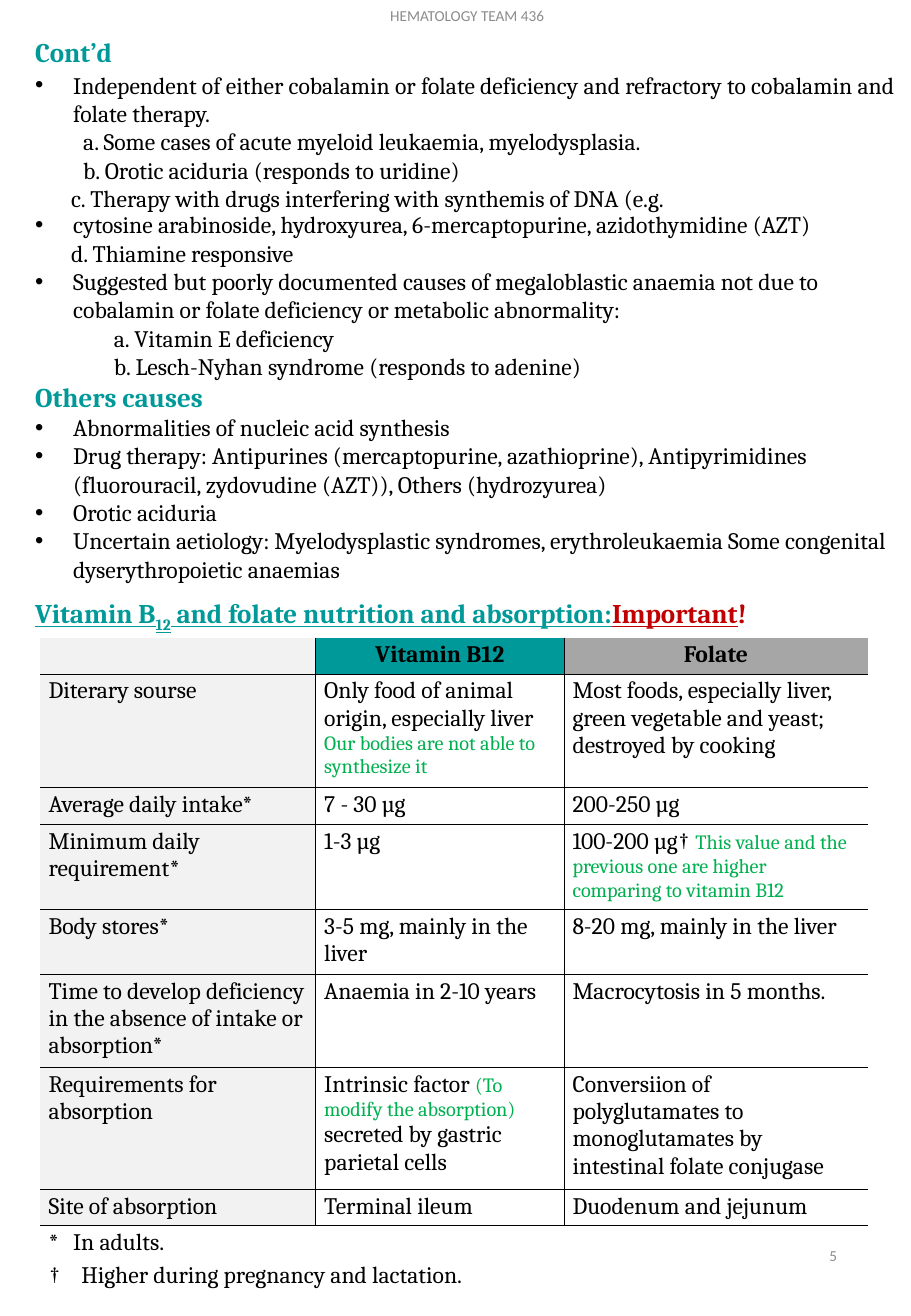
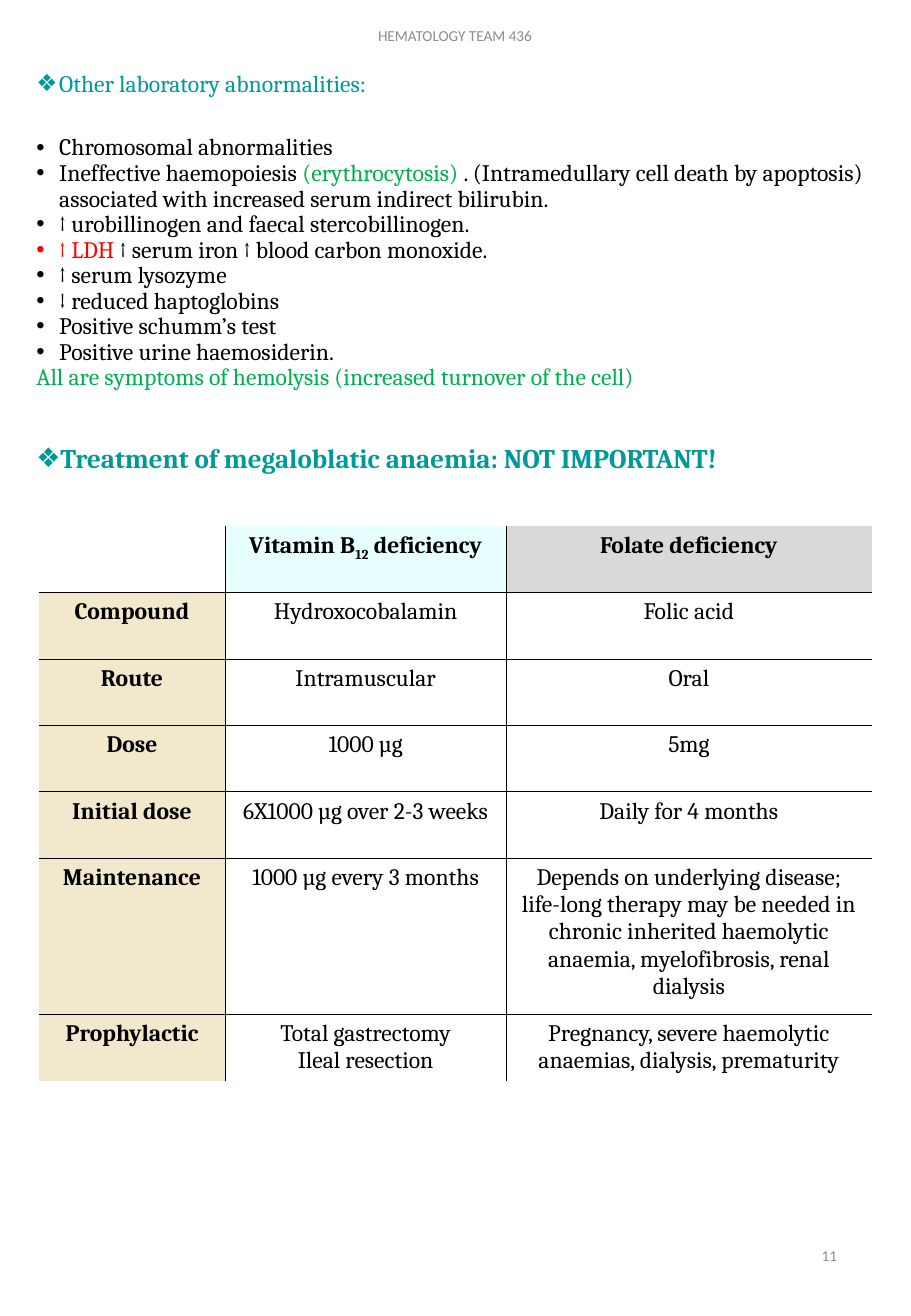
import dataclasses

import pptx
import pptx.dml.color
import pptx.enum.text
import pptx.oxml
import pptx.oxml.ns
import pptx.util

Pt = pptx.util.Pt
RGBColor = pptx.dml.color.RGBColor
ALIGN = pptx.enum.text.PP_ALIGN
ANCHOR = pptx.enum.text.MSO_ANCHOR
AUTO_SIZE = pptx.enum.text.MSO_AUTO_SIZE

BLACK = RGBColor(0x00, 0x00, 0x00)
TEAL = RGBColor(0x00, 0x99, 0x99)
GREEN = RGBColor(0x00, 0xB0, 0x50)
RED = RGBColor(0xFF, 0x00, 0x00)
DARK_RED = RGBColor(0xC0, 0x00, 0x00)
FOOTER_GRAY = RGBColor(0x8C, 0x8C, 0x8C)
LABEL_GRAY = RGBColor(0xF2, 0xF2, 0xF2)
FOLATE_GRAY = RGBColor(0xA6, 0xA6, 0xA6)
PALE_GRAY = RGBColor(0xD9, 0xD9, 0xD9)
PALE_CYAN = RGBColor(0xE7, 0xFF, 0xFF)
SAND = RGBColor(0xF2, 0xE9, 0xCC)

BODY = {"name": "Cambria", "size": Pt(14), "bold": False, "color": BLACK}
BOLD = BODY | {"bold": True}
HEADING = BOLD | {"size": Pt(16), "color": TEAL}
UNDERLINED = HEADING | {"underline": True}
GREEN_BODY = BODY | {"color": GREEN}
SMALL_NOTE = GREEN_BODY | {"size": Pt(12)}
FOOTER = {"name": "Calibri", "size": Pt(9), "color": FOOTER_GRAY}


@dataclasses.dataclass
class Line:
    spans: list
    bullet: str = ""
    left: float = 0
    hanging: float = 0
    before: float = 0
    spacing: float = 1.0
    align: object = ALIGN.LEFT


def line(*spans, style=BODY, **settings):
    pairs = [(span, style) if isinstance(span, str) else span for span in spans]
    return Line(pairs, **settings)


def bulleted(*spans, **settings):
    return line(*spans, **({"bullet": "•", "left": 22.5, "hanging": 22.5} | settings))


def lab_item(*spans, **settings):
    return bulleted(*spans, **({"left": 13.5, "hanging": 13.5, "spacing": 0.9} | settings))


def add_xml(parent, markup):
    declaration = pptx.oxml.ns.nsdecls("a")
    parent.append(pptx.oxml.parse_xml(markup.replace(" ", f" {declaration} ", 1)))


def write_span(para, text, style):
    span = para.add_run()
    span.text = text
    for name, value in style.items():
        if name == "color":
            span.font.color.rgb = value
        elif name == "baseline":
            span._r.get_or_add_rPr().set("baseline", str(value))
        else:
            setattr(span.font, name, value)


def write_lines(frame, lines):
    for index, item in enumerate(lines):
        para = frame.paragraphs[0] if index == 0 else frame.add_paragraph()
        settings = {
            "alignment": item.align,
            "line_spacing": item.spacing,
            "space_before": Pt(item.before),
            "space_after": Pt(0),
        }
        for name, value in settings.items():
            setattr(para, name, value)
        properties = para._p.get_or_add_pPr()
        properties.set("marL", str(Pt(item.left)))
        properties.set("indent", str(-Pt(item.hanging)))
        if item.bullet:
            add_xml(properties, '<a:buFont typeface="Arial"/>')
            add_xml(properties, f'<a:buChar char="{item.bullet}"/>')
        else:
            add_xml(properties, "<a:buNone />")
        for text, style in item.spans:
            write_span(para, text, style)


def fill_box(box, place, lines, anchor=ANCHOR.TOP):
    for name, value in zip(("left", "top", "width", "height"), place):
        setattr(box, name, Pt(value))
    frame = box.text_frame
    settings = {"word_wrap": True, "auto_size": AUTO_SIZE.NONE, "vertical_anchor": anchor}
    for name, value in settings.items():
        setattr(frame, name, value)
    write_lines(frame, lines)


def add_text(page, place, lines):
    box = page.shapes.add_textbox(*map(Pt, place))
    fill_box(box, place, lines, ANCHOR.MIDDLE)


def add_header_and_number(page, left, top, number):
    header = line("HEMATOLOGY TEAM 436", style=FOOTER, align=ALIGN.CENTER)
    add_text(page, (left, top, 182, 41.8), [header])
    add_text(page, (381.6, 722.9, 121.7, 41.8), [line(number, style=FOOTER, align=ALIGN.RIGHT)])


def draw_edges(cell, edges):
    properties = cell._tc.get_or_add_tcPr()
    for side, drawn in edges.items():
        paint = f'<a:solidFill><a:srgbClr val="{BLACK}"/></a:solidFill>' if drawn else "<a:noFill/>"
        add_xml(properties, f'<a:ln{side} w="{Pt(0.5)}">{paint}</a:ln{side}>')


def add_grid(page, origin, widths, heights, rows, header_fills, label_fill,
             label_style=BODY, align=ALIGN.LEFT, margins=(7.2, 3.6)):
    size = (sum(widths), sum(heights))
    frame = page.shapes.add_table(len(rows), len(widths), *map(Pt, origin + size))
    table = frame.table
    table.first_row = table.horz_banding = False
    for column, width in zip(table.columns, widths):
        column.width = Pt(width)
    for row, height in zip(table.rows, heights):
        row.height = Pt(height)
    for top, texts in enumerate(rows):
        merged = len(texts) == 1
        if merged:
            table.cell(top, 0).merge(table.cell(top, len(widths) - 1))
        for left in range(len(widths)):
            cell = table.cell(top, left)
            cell.margin_left = cell.margin_right = Pt(margins[0])
            cell.margin_top = cell.margin_bottom = Pt(margins[1])
            draw_edges(cell, {
                "L": left > 0 and not merged,
                "R": left < len(widths) - 1 and not merged,
                "T": top > 0,
                "B": top < len(rows) - 1,
            })
            fill = header_fills[left] if top == 0 else label_fill if left == 0 and not merged else None
            if fill is None:
                cell.fill.background()
            else:
                cell.fill.solid()
                cell.fill.fore_color.rgb = fill
            content = texts[left] if left < len(texts) else ""
            if not content:
                cell.text_frame.paragraphs[0]._p.get_or_add_endParaRPr().set("sz", "1400")
                continue
            style = BOLD if top == 0 else label_style if left == 0 else BODY
            if isinstance(content, str):
                content = [line(part, style=style) for part in content.split("\n")]
            for item in content:
                item.align = ALIGN.CENTER if top == 0 else align
            write_lines(cell.text_frame, content)


def build_causes_page(deck):
    page = deck.slides.add_slide(deck.slide_layouts[3])
    title, independent, others = page.placeholders
    fill_box(title, (13.7, 17.3, 200, 26.6), [line("Cont’d", style=HEADING)], ANCHOR.MIDDLE)
    fill_box(independent, (13.7, 38.2, 526, 90), [
        bulleted("Independent of either cobalamin or folate deficiency and refractory to "
                 "cobalamin and folate therapy."),
        line("a. Some cases of acute myeloid leukaemia, myelodysplasia.", left=28.4),
        line("b. Orotic aciduria (responds to uridine)", left=28.4),
        line("c. Therapy with drugs interfering with synthemis of DNA (e.g.", left=21.2),
    ])
    fill_box(others, (13.7, 121, 526, 230), [
        bulleted("cytosine arabinoside, hydroxyurea, 6-mercaptopurine, azidothymidine (AZT)"),
        line("d. Thiamine responsive", left=21.2),
        bulleted("Suggested but poorly documented causes of megaloblastic anaemia not due to "
                 "cobalamin or folate deficiency or metabolic abnormality:"),
        line("a. Vitamin E deficiency", left=46.6),
        line("b. Lesch-Nyhan syndrome (responds to adenine)", left=46.6),
        line("Others causes", style=HEADING),
        bulleted("Abnormalities of nucleic acid synthesis"),
        bulleted("Drug therapy: Antipurines (mercaptopurine, azathioprine), Antipyrimidines "
                 "(fluorouracil, zydovudine (AZT)), Others (hydrozyurea)"),
        bulleted("Orotic aciduria"),
        bulleted("Uncertain aetiology: Myelodysplastic syndromes, erythroleukaemia Some "
                 "congenital dyserythropoietic anaemias"),
    ])
    add_text(page, (13.7, 351.4, 470, 26.6), [line(
        "Vitamin B",
        ("12", UNDERLINED | {"baseline": -25000}),
        " and folate nutrition and absorption:",
        ("Important", UNDERLINED | {"color": DARK_RED}),
        ("!", HEADING | {"color": DARK_RED}),
        style=UNDERLINED,
    )])
    rows = [
        ["", "Vitamin B12", "Folate"],
        ["Diterary sourse",
         [line("Only food of animal origin, especially liver"),
          line("Our bodies are not able to synthesize it", style=SMALL_NOTE)],
         "Most foods, especially liver, green vegetable and yeast; destroyed by cooking"],
        ["Average daily intake*", "7 - 30 µg", "200-250 µg"],
        ["Minimum daily requirement*", "1-3 µg",
         [line("100-200 µg† ", ("This value and the previous one are higher comparing to "
                                "vitamin B12", SMALL_NOTE))]],
        ["Body stores*", "3-5 mg, mainly in the liver", "8-20 mg, mainly in the liver"],
        ["Time to develop deficiency in the absence of intake or absorption*",
         "Anaemia in 2-10 years", "Macrocytosis in 5 months."],
        ["Requirements for absorption",
         [line("Intrinsic factor ", ("(To modify the absorption) ", SMALL_NOTE),
               "secreted by gastric parietal cells")],
         "Conversiion of polyglutamates to monoglutamates by intestinal folate conjugase"],
        ["Site of absorption", "Terminal ileum", "Duodenum and jejunum"],
        [[line("*\tIn adults.", left=14.5, hanging=14.5),
          line("†\tHigher during pregnancy and lactation.", left=19.5, hanging=19.5, before=3.6)]],
    ]
    add_grid(page, (23.8, 378), (163.4, 147.2, 180),
             (21.5, 67.5, 21.8, 50.4, 38.5, 55.1, 72.3, 21.5, 43), rows,
             (LABEL_GRAY, TEAL, FOLATE_GRAY), LABEL_GRAY, margins=(5, 2.2))
    add_header_and_number(page, 185.8, -11.5, "5")


def build_treatment_page(deck):
    page = deck.slides.add_slide(deck.slide_layouts[1])
    title, body = page.placeholders
    title._element.getparent().remove(title._element)
    fill_box(body, (14.4, 38.9, 510.5, 260), [
        lab_item("Other laboratory abnormalities:", style=BODY | {"color": TEAL}, bullet="❖"),
        lab_item("Chromosomal abnormalities", before=22.7),
        lab_item("Ineffective haemopoiesis ", ("(erythrocytosis) ", GREEN_BODY),
                 ". (Intramedullary cell death by apoptosis) associated with increased serum "
                 "indirect bilirubin."),
        lab_item("↑ urobillinogen and faecal stercobillinogen."),
        lab_item(("↑ LDH ", BODY | {"color": RED}), "↑ serum iron ↑ blood carbon monoxide."),
        lab_item("↑ serum lysozyme"),
        lab_item("↓ reduced haptoglobins"),
        lab_item("Positive schumm’s test"),
        lab_item("Positive urine haemosiderin."),
        line("All are symptoms of hemolysis (increased turnover of the cell)",
             style=GREEN_BODY, spacing=0.9),
        lab_item("Treatment of megaloblatic anaemia: NOT IMPORTANT!",
                 style=HEADING, bullet="❖", before=32.4),
    ])
    rows = [
        ["", [line("Vitamin B", ("12", BOLD | {"baseline": -25000}), " deficiency", style=BOLD)],
         "Folate deficiency"],
        ["Compound", "Hydroxocobalamin", "Folic acid"],
        ["Route", "Intramuscular", "Oral"],
        ["Dose", "1000 µg", "5mg"],
        ["Initial dose", "6X1000 µg over 2-3 weeks", "Daily for 4 months"],
        ["Maintenance", "1000 µg every 3 months",
         "Depends on underlying disease; life-long therapy may be needed in chronic inherited "
         "haemolytic anaemia, myelofibrosis, renal dialysis"],
        ["Prophylactic", "Total gastrectomy\nIleal resection",
         "Pregnancy, severe haemolytic\nanaemias, dialysis, prematurity"],
    ]
    add_grid(page, (23, 311.8), (110.6, 166.4, 216.8), (39.4,) * 5 + (92.4, 39.4), rows,
             (None, PALE_CYAN, PALE_GRAY), SAND, label_style=BOLD, align=ALIGN.CENTER)
    add_header_and_number(page, 178.6, 0, "11")


def main():
    deck = pptx.Presentation()
    deck.slide_width, deck.slide_height = Pt(540), Pt(780)
    build_causes_page(deck)
    build_treatment_page(deck)
    deck.save("out.pptx")


if __name__ == "__main__":
    main()
